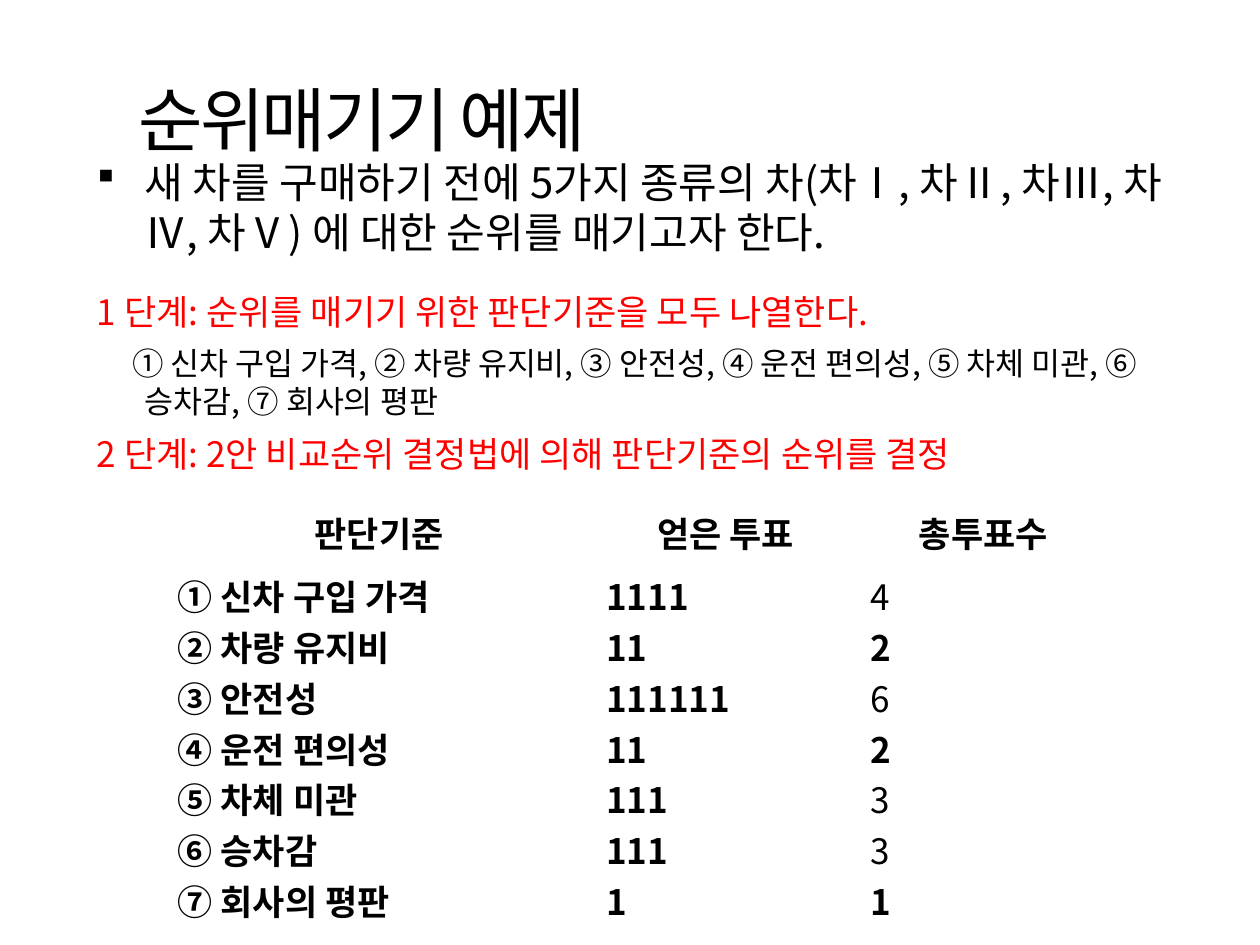
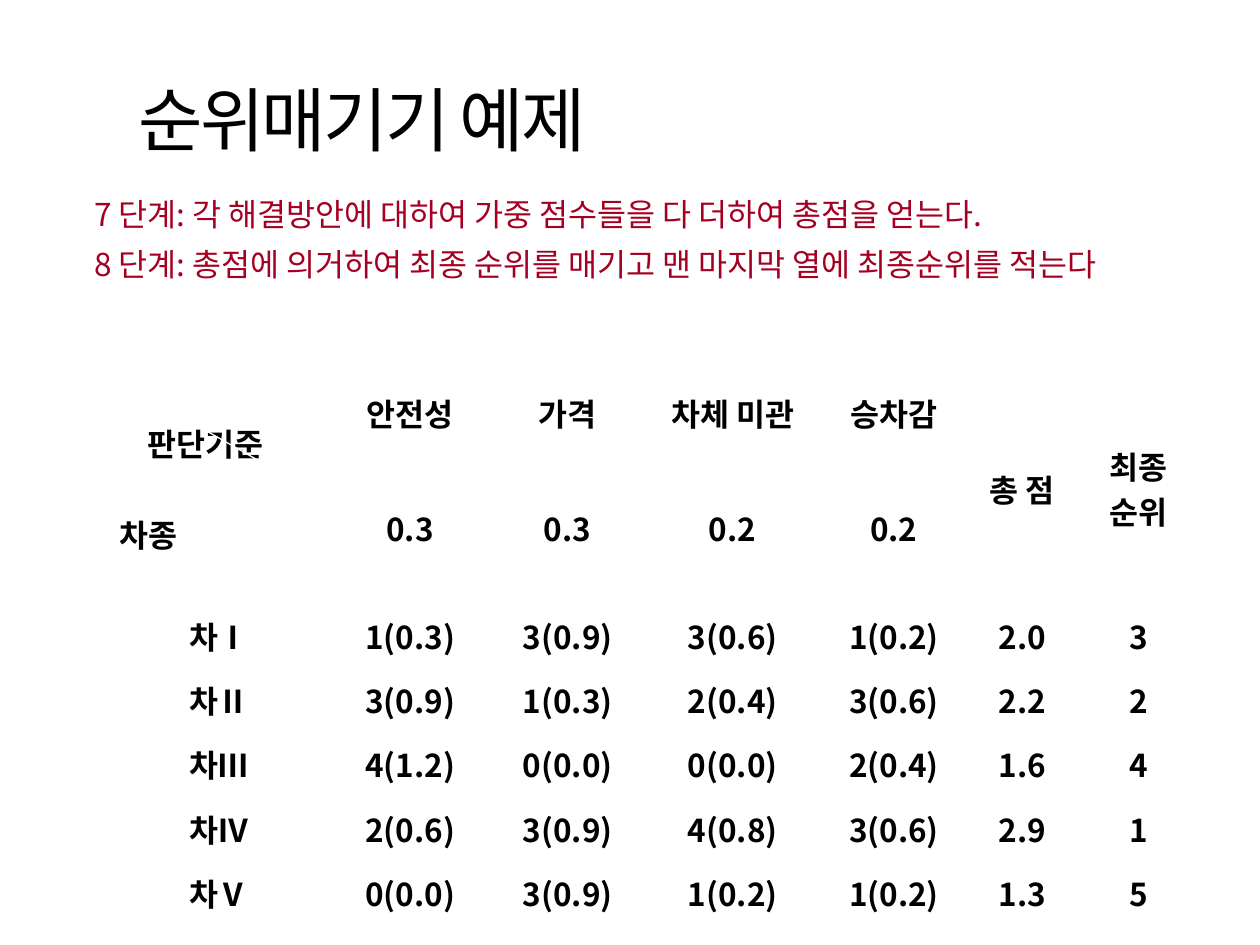
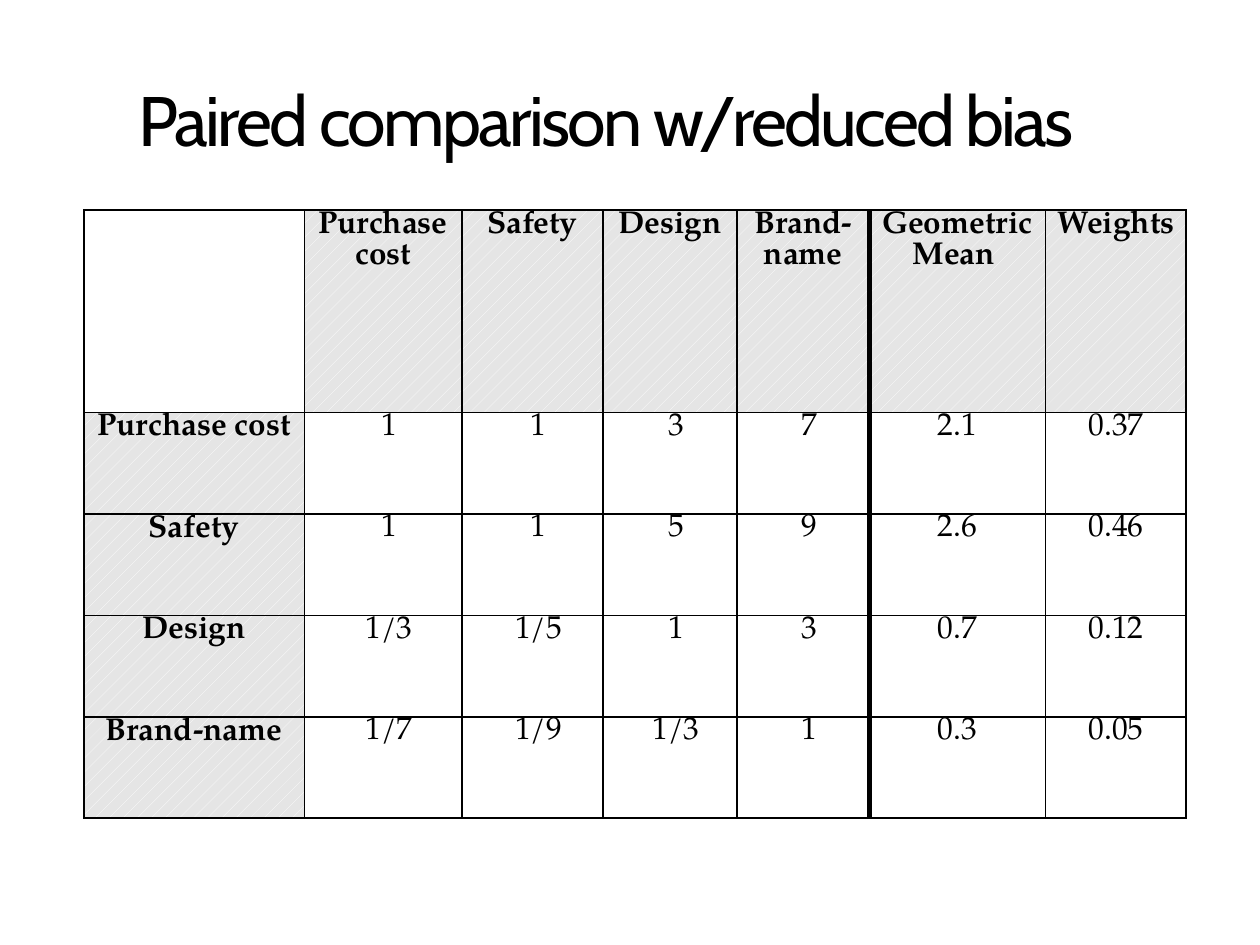
from lxml.etree import SubElement as Sub
from pptx import Presentation
from pptx.dml.color import RGBColor as Rgb
from pptx.enum.dml import MSO_PATTERN as Pat
from pptx.enum.shapes import MSO_CONNECTOR as Con
from pptx.enum.text import MSO_ANCHOR as Anc, PP_ALIGN as Al
from pptx.oxml.ns import qn
from pptx.util import Inches, Pt

HUE = {"ink": "000000", "red": "FF0000", "wine": "A50021", "white": "FFFFFF", "gray": "E5E5E5"}
KOR, SANS, SERIF = "Noto Sans CJK KR", "Cabin", "TeX Gyre Pagella"
PLAIN = "{2D5ABB26-0587-4C30-8999-92F81FD0307C}"

deck = Presentation()
deck.slide_width, deck.slide_height = Inches(10), Inches(7.5)
U = deck.slide_width // 100


def write(frame, lines, face, size, hue="ink", bold=False, left=0, hang=0, **form):
    frame.word_wrap = True
    for i, line in enumerate(lines):
        par = frame.paragraphs[0] if i == 0 and not frame.text else frame.add_paragraph()
        for key, val in form.items():
            setattr(par, key, val)
        prop = par._p.get_or_add_pPr()
        prop.set("marL", str(int(left * U)))
        prop.set("indent", str(int(hang * U)))
        run = par.add_run()
        run.text = line
        for key, val in {"name": face, "size": Pt(size), "bold": bold}.items():
            setattr(run.font, key, val)
        run.font.color.rgb = Rgb.from_string(HUE[hue])
    return frame.paragraphs


def grid(page, x, y, cols, rows, data, face, size, **form):
    table = page.shapes.add_table(len(rows), len(cols), int(x * U), int(y * U),
                                  int(sum(cols) * U), int(sum(rows) * U)).table
    table.first_row = table.horz_banding = False
    table._tbl.tblPr.find(qn("a:tableStyleId")).text = PLAIN
    for col, wide in zip(table.columns, cols):
        col.width = int(wide * U)
    for row, high, texts in zip(table.rows, rows, data):
        row.height = int(high * U)
        for cell, text in zip(row.cells, texts):
            cell.fill.background()
            if text:
                write(cell.text_frame, text.split("\n"), face, size, **form)
    return table


pages = []
for head, face in [("순위매기기 예제", KOR), ("순위매기기 예제", KOR),
                   ("Paired comparison w/reduced bias", SANS)]:
    page = deck.slides.add_slide(deck.slide_layouts[6])
    frame = page.shapes.add_textbox(10 * U, int(5.6 * U), 85 * U, 10 * U).text_frame
    par = write(frame, [head], face, 40)[0]
    par.runs[0]._r.rPr.set("spc", "-150")
    pages.append(page)
vote, rank, pair = pages

body = vote.shapes.add_textbox(6 * U, int(11.9 * U), int(88.5 * U), int(54.7 * U)).text_frame
for text, size, hue, hang, gap in [
    ("새 차를 구매하기 전에 5가지 종류의 차(차Ⅰ, 차Ⅱ, 차Ⅲ, 차Ⅳ, 차Ⅴ) 에 대한 순위를 매기고자 한다.",
     24, "ink", -3.8, 1.0),
    ("1 단계: 순위를 매기기 위한 판단기준을 모두 나열한다.", 20, "red", -3.8, 1.5),
    ("① 신차 구입 가격, ② 차량 유지비, ③ 안전성, ④ 운전 편의성, ⑤ 차체 미관, ⑥ 승차감, ⑦ 회사의 평판",
     18, "ink", -1, 1.0),
    ("2 단계: 2안 비교순위 결정법에 의해 판단기준의 순위를 결정", 20, "red", -3.8, 1.0),
]:
    write(body, [text], KOR, size, hue, left=4.5, hang=hang,
          line_spacing=gap, space_before=Pt(7))
prop = body.paragraphs[0]._p.pPr
Sub(prop, qn("a:buSzPct"), val="95000")
Sub(prop, qn("a:buFont"), typeface="Wingdings", charset="2")
Sub(prop, qn("a:buChar"), char="§")

tally = [("① 신차 구입 가격", 4), ("② 차량 유지비", 2), ("③ 안전성", 6), ("④ 운전 편의성", 2),
         ("⑤ 차체 미관", 3), ("⑥ 승차감", 3), ("⑦ 회사의 평판", 1)]
data = [["판단기준", "얻은 투표", "총투표수"],
        ["\n".join(name for name, n in tally),
         "\n".join("1" * n for name, n in tally),
         "\n".join(str(n) for name, n in tally)]]
table = grid(vote, 13.1, 39.7, [34, 21, 19.9], [4.4, 30.5], data, KOR, 20, bold=True)
for r, row in enumerate(table.rows):
    for cell in row.cells:
        cell.vertical_anchor = Anc.MIDDLE
        for par in cell.text_frame.paragraphs:
            par.alignment = Al.JUSTIFY if r else Al.CENTER
for par, (name, n) in zip(table.cell(1, 2).text_frame.paragraphs, tally):
    par.runs[0].font.bold = n < 3

body = rank.shapes.add_textbox(int(5.8 * U), 15 * U, int(88.1 * U), int(51.7 * U)).text_frame
write(body, ["7 단계: 각 해결방안에 대하여 가중 점수들을 다 더하여 총점을 얻는다.",
             "8 단계: 총점에 의거하여 최종 순위를 매기고 맨 마지막 열에 최종순위를 적는다"],
      KOR, 18, "wine", left=4.5, hang=-3.8, space_before=Pt(7))

data = [["판단기준\n차종", "안전성", "가격", "차체 미관", "승차감", "총 점", "최종\n순위"],
        ["", "0.3", "0.3", "0.2", "0.2", "", ""],
        ["차Ⅰ", "1(0.3)", "3(0.9)", "3(0.6)", "1(0.2)", "2.0", "3"],
        ["차Ⅱ", "3(0.9)", "1(0.3)", "2(0.4)", "3(0.6)", "2.2", "2"],
        ["차Ⅲ", "4(1.2)", "0(0.0)", "0(0.0)", "2(0.4)", "1.6", "4"],
        ["차Ⅳ", "2(0.6)", "3(0.9)", "4(0.8)", "3(0.6)", "2.9", "1"],
        ["차Ⅴ", "0(0.0)", "3(0.9)", "1(0.2)", "1(0.2)", "1.3", "5"]]
table = grid(rank, 8.5, 29.6, [17.8, 12.5, 12.5, 13.7, 11.9, 8.5, 10], [6.3, 12] + [5.1] * 5,
             data, KOR, 18, bold=True, alignment=Al.CENTER)
for cell in table.iter_cells():
    cell.vertical_anchor = Anc.MIDDLE
for c in (0, 5, 6):
    table.cell(0, c).merge(table.cell(1, c))
top, low = table.cell(0, 0).text_frame.paragraphs
top.alignment = low.alignment = Al.JUSTIFY
top._p.pPr.set("marL", str(int(2.2 * U)))
low.space_before = Pt(26)

line = rank.shapes.add_connector(Con.STRAIGHT, int(8.3 * U), int(29.6 * U),
                                 int(26.4 * U), int(39.9 * U))
line.line.color.rgb = Rgb.from_string(HUE["white"])
line.line.width = Pt(0.75)
Sub(line._element.spPr, qn("a:effectLst"))

data = [["", "Purchase cost", "Safety", "Design", "Brand-name", "Geometric \nMean ", "Weights"],
        ["Purchase cost", "1", "1", "3", "7", "2.1", "0.37"],
        ["Safety", "1", "1", "5", "9", "2.6", "0.46"],
        ["Design", "1/3", "1/5", "1", "3", "0.7", "0.12"],
        ["Brand-name", "1/7", "1/9", "1/3", "1", "0.3", "0.05"]]
table = grid(pair, 6.65, 16.65, [17.5, 12.5, 11.2, 10.65, 10.5, 14, 11.15], [16.1] + [8.05] * 4,
             data, SERIF, 18, alignment=Al.CENTER, line_spacing=Pt(18))
for r, row in enumerate(table.rows):
    for c, cell in enumerate(row.cells):
        for side, gap in {"left": 0.7, "right": 0.7, "top": 0, "bottom": 0}.items():
            setattr(cell, "margin_" + side, int(gap * U))
        label = (r == 0) != (c == 0)
        if label:
            cell.fill.patterned()
            cell.fill.pattern = Pat.PERCENT_10
            cell.fill.fore_color.rgb = Rgb.from_string(HUE["white"])
            cell.fill.back_color.rgb = Rgb.from_string(HUE["gray"])
        for par in cell.text_frame.paragraphs:
            for run in par.runs:
                run.font.bold = label
            if r and 0 < c < 5:
                par._p.pPr.set("marL", str(U))
        prop = cell._tc.get_or_add_tcPr()
        for i, side in enumerate("LRTB"):
            thick = 3 if (c, side) in [(4, "R"), (5, "L")] else 1
            edge = prop.makeelement(qn("a:ln" + side), {"w": str(Pt(thick))})
            Sub(Sub(edge, qn("a:solidFill")), qn("a:srgbClr"), val=HUE["ink"])
            prop.insert(i, edge)

deck.save("out.pptx")
